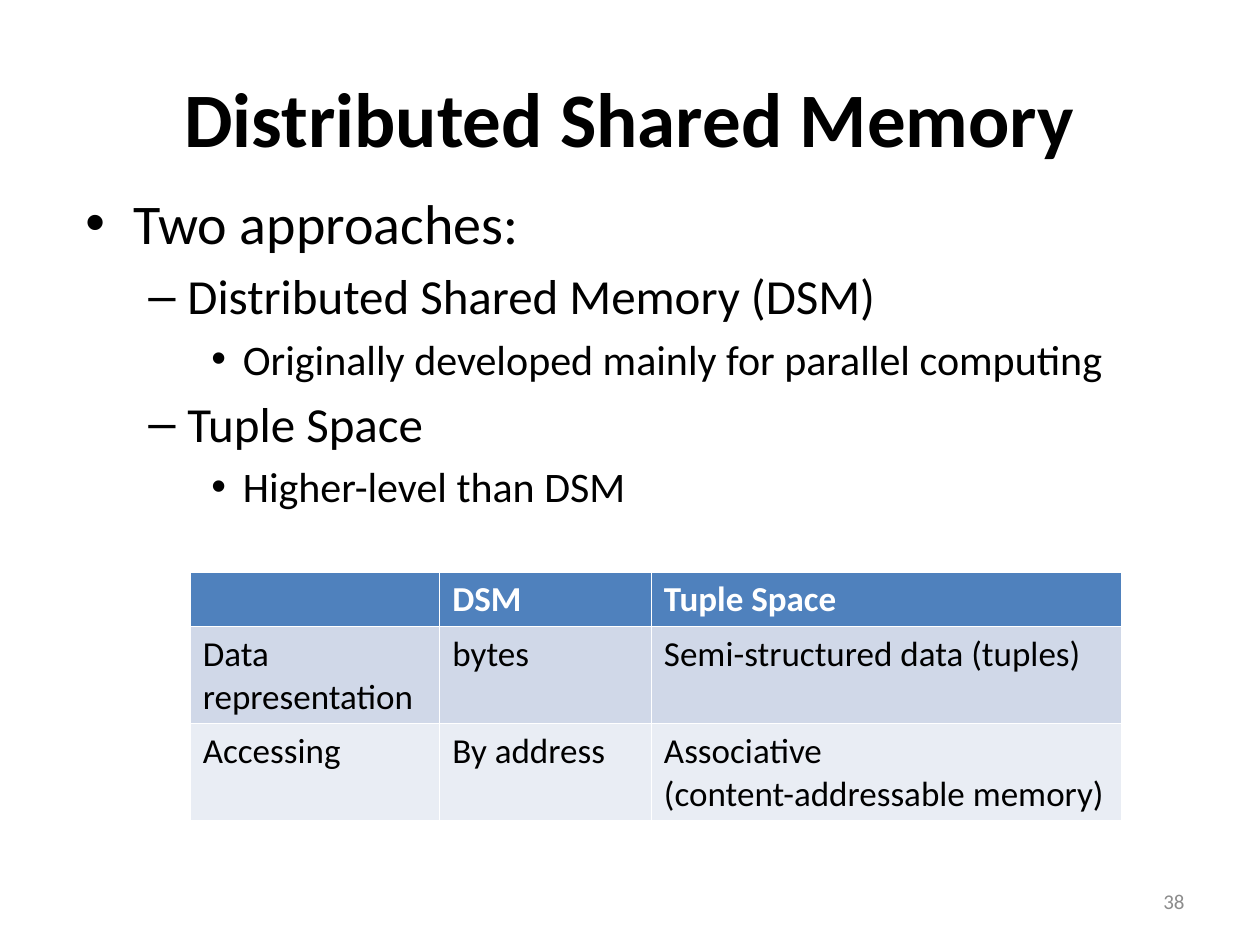
import pptx
import pptx.util
import pptx.dml.color
import pptx.enum.text
import pptx.oxml.ns
import lxml.etree

Inches, Pt = pptx.util.Inches, pptx.util.Pt
ALIGN = pptx.enum.text.PP_ALIGN
ANCHOR = pptx.enum.text.MSO_ANCHOR

COLORS = {"black": "000000", "white": "FFFFFF", "gray": "8C8C8C",
          "head": "4F81BD", "odd": "D0D8E8", "even": "E9EDF4"}
TITLE = "Distributed Shared Memory"
POINTS = [
    (0, "Two approaches:"),
    (1, "Distributed Shared Memory (DSM)"),
    (2, "Originally developed mainly for parallel computing"),
    (1, "Tuple Space"),
    (2, "Higher-level than DSM"),
]
LEVELS = [
    {"size": 32, "left": 0.38, "hang": 0.38, "mark": "•"},
    {"size": 28, "left": 0.81, "hang": 0.31, "mark": "–"},
    {"size": 24, "left": 1.25, "hang": 0.25, "mark": "•"},
]
ROWS = [
    ["", "DSM", "Tuple Space"],
    ["Data representation", "bytes", "Semi-structured data (tuples)"],
    ["Accessing", "By address", "Associative\n(content-addressable memory)"],
]
FILLS = ["head", "odd", "even"]
WIDTHS = [1.98, 1.68, 3.73]
HEIGHTS = [0.43, 0.77, 0.77]
PAGE = "38"


def rgb(name):
    return pptx.dml.color.RGBColor.from_string(COLORS[name])


def write(par, text, size=20, color="black", bold=False, align=ALIGN.LEFT):
    par.alignment = align
    run = par.add_run()
    run.text = text
    run.font.name = "Calibri"
    run.font.size = Pt(size)
    run.font.bold = bold
    run.font.color.rgb = rgb(color)


def bullet(par, left, hang, mark):
    props = par._p.get_or_add_pPr()
    props.set("marL", str(Inches(left)))
    props.set("indent", str(-Inches(hang)))
    for tag, key, val in [("a:buFont", "typeface", "Arial"),
                          ("a:buChar", "char", mark)]:
        lxml.etree.SubElement(props, pptx.oxml.ns.qn(tag)).set(key, val)


def frame(slide, left, top, width, height, anchor=ANCHOR.MIDDLE):
    box = slide.shapes.add_textbox(
        Inches(left), Inches(top), Inches(width), Inches(height))
    text = box.text_frame
    text.word_wrap = True
    text.vertical_anchor = anchor
    return text


def nextpar(text, index):
    return text.add_paragraph() if index else text.paragraphs[0]


def main():
    deck = pptx.Presentation()
    deck.slide_width, deck.slide_height = Inches(10), Inches(7.5)
    slide = deck.slides.add_slide(deck.slide_layouts[6])

    title = frame(slide, 0.5, 0.3, 9, 1.25)
    write(title.paragraphs[0], TITLE, size=44, bold=True, align=ALIGN.CENTER)

    body = frame(slide, 0.58, 1.45, 9, 2.83, anchor=ANCHOR.TOP)
    for i, (depth, text) in enumerate(POINTS):
        look = LEVELS[depth]
        par = nextpar(body, i)
        par.level = depth
        par.space_before = Pt(look["size"] * 0.2)
        bullet(par, look["left"], look["hang"], look["mark"])
        write(par, text, size=look["size"])

    table = slide.shapes.add_table(
        len(ROWS), len(WIDTHS), Inches(1.51), Inches(4.54),
        Inches(sum(WIDTHS)), Inches(sum(HEIGHTS))).table
    for col, width in zip(table.columns, WIDTHS):
        col.width = Inches(width)
    for r, (row, fill) in enumerate(zip(ROWS, FILLS)):
        table.rows[r].height = Inches(HEIGHTS[r])
        for c, text in enumerate(row):
            cell = table.cell(r, c)
            cell.fill.solid()
            cell.fill.fore_color.rgb = rgb(fill)
            if not text:
                continue
            for i, line in enumerate(text.split("\n")):
                write(nextpar(cell.text_frame, i), line, bold=r == 0,
                      color="black" if r else "white")

    page = frame(slide, 7.17, 6.95, 2.33, 0.4)
    write(page.paragraphs[0], PAGE, size=12, color="gray", align=ALIGN.RIGHT)
    deck.save("out.pptx")


if __name__ == "__main__":
    main()
